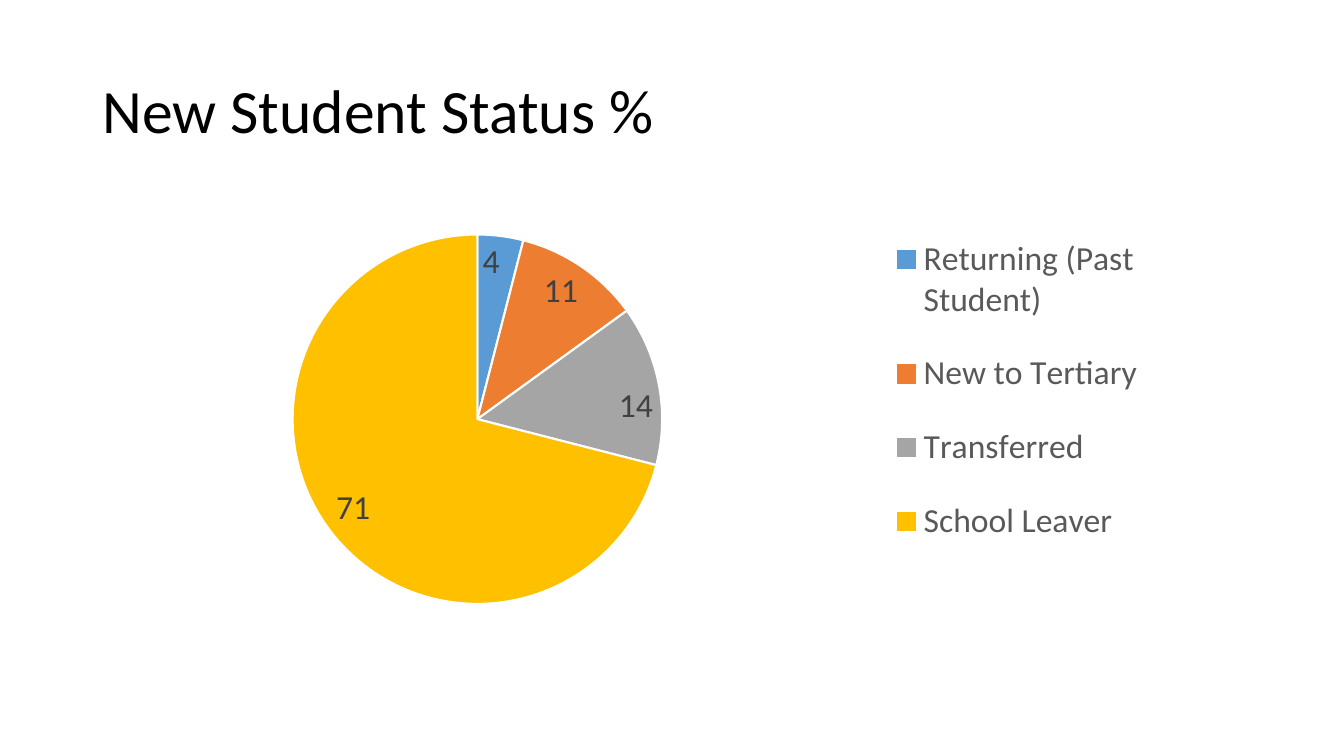
from dataclasses import dataclass

from lxml import etree
from pptx import Presentation
from pptx import util as u
from pptx.chart.data import CategoryChartData
from pptx.dml.color import RGBColor
from pptx.enum import chart as ch
from pptx.enum import text
from pptx.oxml.ns import qn


@dataclass(frozen=True)
class Theme:
    font: str = "Calibri"
    title: str = "000000"
    legend: str = "595959"
    label: str = "404040"
    edge: str = "FFFFFF"
    title_size: int = 44
    chart_size: int = 24


@dataclass(frozen=True)
class Status:
    name: str
    percent: int
    color: str


@dataclass(frozen=True)
class Box:
    x: float
    y: float
    w: float
    h: float


THEME = Theme()
STATUSES = [
    Status("Returning (Past Student)", 4, "5B9BD5"),
    Status("New to Tertiary", 11, "ED7D31"),
    Status("Transferred", 14, "A5A5A5"),
    Status("School Leaver", 71, "FFC000"),
]


def rgb(color: str) -> RGBColor:
    """Turn a hex string into a colour."""
    return RGBColor.from_string(color)


def inches(box: Box) -> list:
    """Give the four lengths of a box."""
    return [u.Inches(v) for v in (box.x, box.y, box.w, box.h)]


def set_font(font, size: int, color: str) -> None:
    """Apply the theme face with a size and colour."""
    font.name = THEME.font
    font.size = u.Pt(size)
    font.color.rgb = rgb(color)


def add_text(slide, content: str, box: Box, *, size: int, color: str,
             line_spacing: float = 1.0) -> None:
    """Add a wrapped, vertically centred text box."""
    tf = slide.shapes.add_textbox(*inches(box)).text_frame
    tf.word_wrap = True
    tf.vertical_anchor = text.MSO_ANCHOR.MIDDLE
    p = tf.paragraphs[0]
    p.line_spacing = line_spacing
    r = p.add_run()
    r.text = content
    set_font(r.font, size, color)


def set_layout(parent, box: Box, after: str, inner: bool = False) -> None:
    """Place a chart part by fractions of the chart area."""
    for old in parent.findall(qn("c:layout")):
        parent.remove(old)
    layout = etree.Element(qn("c:layout"))
    manual = etree.SubElement(layout, qn("c:manualLayout"))
    values = {"layoutTarget": "inner"} if inner else {}
    values |= {"xMode": "edge", "yMode": "edge"}
    values |= {k: str(getattr(box, k)) for k in "xywh"}
    for tag, value in values.items():
        etree.SubElement(manual, qn(f"c:{tag}")).set("val", value)
    anchor = parent.find(qn(after)) if after else None
    parent.insert(0 if anchor is None else parent.index(anchor) + 1, layout)


def add_pie(slide, statuses: list[Status], box: Box) -> None:
    """Add the status pie with its labels and legend."""
    data = CategoryChartData(number_format="0")
    data.categories = [s.name for s in statuses]
    data.add_series("Series 1", [s.percent for s in statuses])
    chart = slide.shapes.add_chart(ch.XL_CHART_TYPE.PIE, *inches(box), data).chart
    chart.has_title = False
    chart.font.name = THEME.font
    chart.has_legend = True
    legend = chart.legend
    legend.position = ch.XL_LEGEND_POSITION.RIGHT
    legend.include_in_layout = False
    set_font(legend.font, THEME.chart_size, THEME.legend)

    plot = chart.plots[0]
    plot.vary_by_categories = True
    plot.has_data_labels = True
    labels = plot.data_labels
    labels.show_value = True
    labels.number_format = "0"
    labels.number_format_is_linked = False
    labels.position = ch.XL_LABEL_POSITION.INSIDE_END
    set_font(labels.font, THEME.chart_size, THEME.label)
    for i, status in enumerate(statuses):
        fmt = plot.series[0].points[i].format
        fmt.fill.solid()
        fmt.fill.fore_color.rgb = rgb(status.color)
        fmt.line.color.rgb = rgb(THEME.edge)
        fmt.line.width = u.Pt(1.5)

    area = chart.element.find(f".//{qn('c:plotArea')}")
    set_layout(area, Box(0.06, 0.18, 0.62, 0.77), "", inner=True)
    key = chart.element.find(f".//{qn('c:legend')}")
    set_layout(key, Box(0.71, 0.12, 0.25, 0.77), "c:legendPos")


def main() -> None:
    """Build and save the slide."""
    prs = Presentation()
    prs.slide_width, prs.slide_height = u.Inches(13.33), u.Inches(7.5)
    s = prs.slides.add_slide(prs.slide_layouts[6])
    add_text(s, "New Student Status %", Box(0.92, 0.4, 11.5, 1.45),
             size=THEME.title_size, color=THEME.title, line_spacing=0.9)
    add_pie(s, STATUSES, Box(0.48, 1.47, 11.5, 4.76))
    prs.save("out.pptx")


if __name__ == "__main__":
    main()
